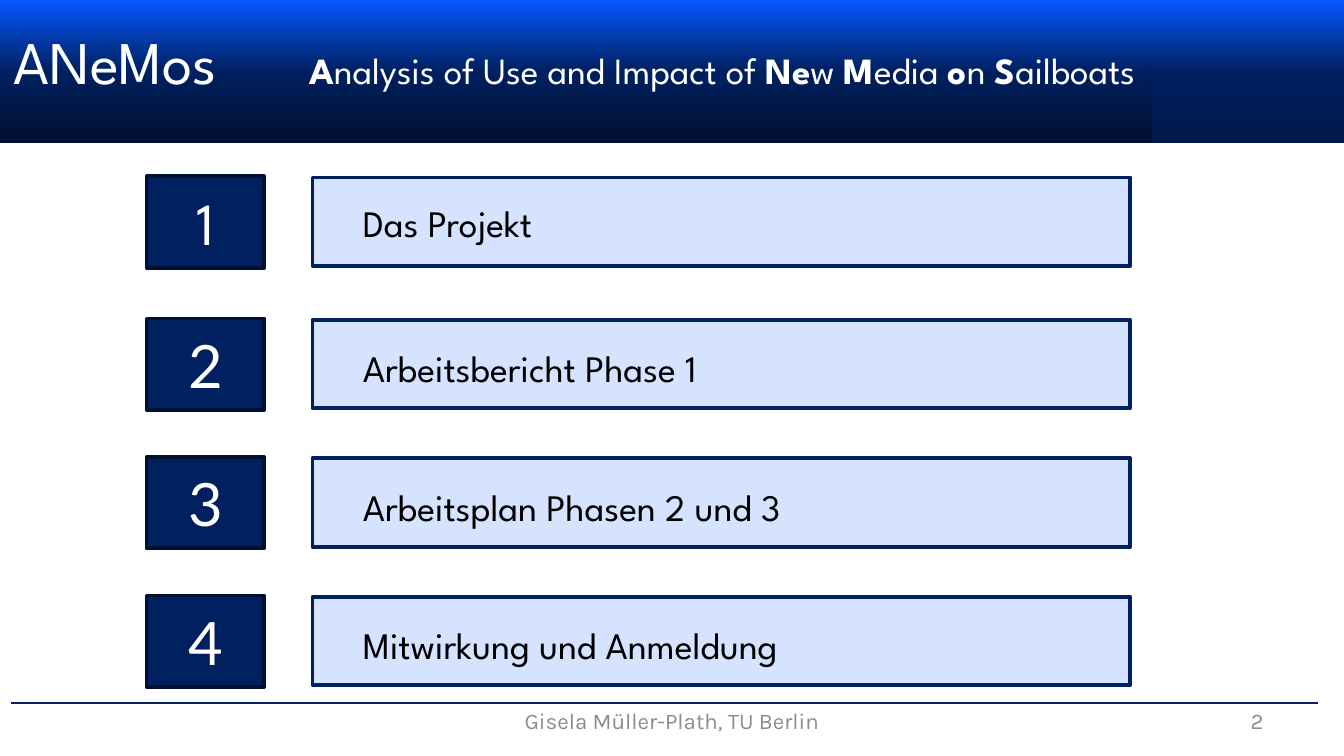
"""Build the ANeMos agenda slide."""
from copy import deepcopy

from pptx import Presentation
from pptx.dml.color import RGBColor
from pptx.enum.shapes import MSO_CONNECTOR, MSO_SHAPE
from pptx.enum.text import MSO_ANCHOR, PP_ALIGN
from pptx.oxml import parse_xml
from pptx.oxml.ns import nsdecls, qn
from pptx.util import Pt

COLORS = {
    "white": "FFFFFF", "black": "000000", "navy": "002060", "bright": "0759FF",
    "deep": "001848", "night": "001030", "pale": "D6E3FF", "grey": "8C8C8C",
}
HEAD, NUMERAL, SMALL = "League Spartan", "Lato", "Karla"


def rgb(name):
    return RGBColor.from_string(COLORS[name])


class Deck:
    """Hold the style and the current slide."""

    def __init__(self, width, height):
        self.prs = Presentation()
        self.prs.slide_width, self.prs.slide_height = Pt(width), Pt(height)
        self.s = self.prs.slides.add_slide(self.prs.slide_layouts[5])

    def run(self, p, text, color, **fmt):
        r = p.add_run()
        r.text = text
        r.font.color.rgb = rgb(color)
        for key, value in fmt.items():
            setattr(r.font, key, value)

    def frame(self, tf, **fmt):
        settings = {"word_wrap": True, "vertical_anchor": MSO_ANCHOR.MIDDLE, **fmt}
        for key, value in settings.items():
            setattr(tf, key, value)
        return tf.paragraphs[0]

    def rect(self, x, y, w, h):
        sp = self.s.shapes.add_shape(MSO_SHAPE.RECTANGLE, Pt(x), Pt(y), Pt(w), Pt(h))
        sp.shadow.inherit = False
        return sp

    def band(self, x, w, h, base):
        sp = self.rect(x, 0, w, h)
        sp.line.fill.background()
        sp.fill.gradient()
        sp.fill.gradient_angle = 90
        gs = sp._element.spPr.find(".//" + qn("a:gs"))
        gs.addnext(deepcopy(gs))
        for stop, pos, color in zip(sp.fill.gradient_stops, (0, 0.5, 1),
                                    (base, "navy", "bright")):
            stop.position = pos
            stop.color.rgb = rgb(color)

    def box(self, x, y, w, h, fill, line):
        sp = self.rect(x, y, w, h)
        sp.fill.solid()
        sp.fill.fore_color.rgb = rgb(fill)
        sp.line.color.rgb = rgb(line)
        sp.line.width = Pt(2)
        return sp

    def number(self, x, y, w, h, text, font):
        sp = self.box(x, y, w, h, "navy", "night")
        p = self.frame(sp.text_frame)
        p.alignment = PP_ALIGN.CENTER
        self.run(p, text, "white", name=font, size=Pt(32))

    def text(self, x, y, w, h, text, color, font, size,
             align=PP_ALIGN.LEFT, anchor=MSO_ANCHOR.MIDDLE):
        sp = self.s.shapes.add_textbox(Pt(x), Pt(y), Pt(w), Pt(h))
        p = self.frame(sp.text_frame, vertical_anchor=anchor)
        p.alignment = align
        self.run(p, text, color, name=font, size=Pt(size))

    def title(self, x, y, w, h, name, parts, tab):
        sp = self.s.shapes.title
        for key, value in {"left": x, "top": y, "width": w, "height": h}.items():
            setattr(sp, key, Pt(value))
        self.s.shapes._spTree.append(sp._element)
        p = self.frame(sp.text_frame, margin_bottom=Pt(24))
        p.alignment = PP_ALIGN.LEFT
        p._p.get_or_add_pPr().append(parse_xml(
            f'<a:tabLst {nsdecls("a")}><a:tab pos="{Pt(tab)}" algn="l"/></a:tabLst>'))
        self.run(p, name + "\t", "white", name=HEAD, size=Pt(32.4))
        for i, part in enumerate(parts):
            self.run(p, part, "white", name=HEAD, size=Pt(19.8), bold=i % 2 == 0)

    def rule(self, x1, x2, y):
        ln = self.s.shapes.add_connector(MSO_CONNECTOR.STRAIGHT,
                                         Pt(x1), Pt(y), Pt(x2), Pt(y))
        ln.line.color.rgb = rgb("navy")
        ln.line.width = Pt(0.9)
        ln._element.spPr.append(parse_xml(f'<a:effectLst {nsdecls("a")}/>'))


def main():
    deck = Deck(720, 405)
    for x, w, base in ((679, 41, "deep"), (614, 76, "deep"), (0, 617, "night")):
        deck.band(x, w, 76.5, base)
    deck.title(0, 8.6, 720, 67.7, "ANeMos",
               ("A", "nalysis of Use and Impact of ", "Ne", "w ", "M", "edia ",
                "o", "n ", "S", "ailboats"), 158.4)

    agenda = (
        ("Das Projekt", 94.4, 9.3, HEAD),
        ("Arbeitsbericht Phase 1", 170.6, 10.8, NUMERAL),
        ("Arbeitsplan Phasen 2 und 3", 244.8, 10.8, NUMERAL),
        ("Mitwirkung und Anmeldung", 319, 10.8, NUMERAL),
    )
    for i, (label, y, drop, font) in enumerate(agenda, 1):
        deck.box(167.5, y + 0.7, 438, 47.5, "pale", "navy")
        deck.number(78.5, y, 63, 49, str(i), font)
        deck.text(187.3, y + drop, 413, 31.7, label, "black", HEAD, 20,
                  anchor=MSO_ANCHOR.TOP)

    deck.text(246, 375.3, 228, 21.6, "Gisela Müller-Plath, TU Berlin",
              "grey", SMALL, 12, PP_ALIGN.CENTER)
    deck.text(516, 375.3, 168, 21.6, "2", "grey", SMALL, 12, PP_ALIGN.RIGHT)
    deck.rule(6, 706, 376.6)
    deck.prs.save("out.pptx")


if __name__ == "__main__":
    main()
